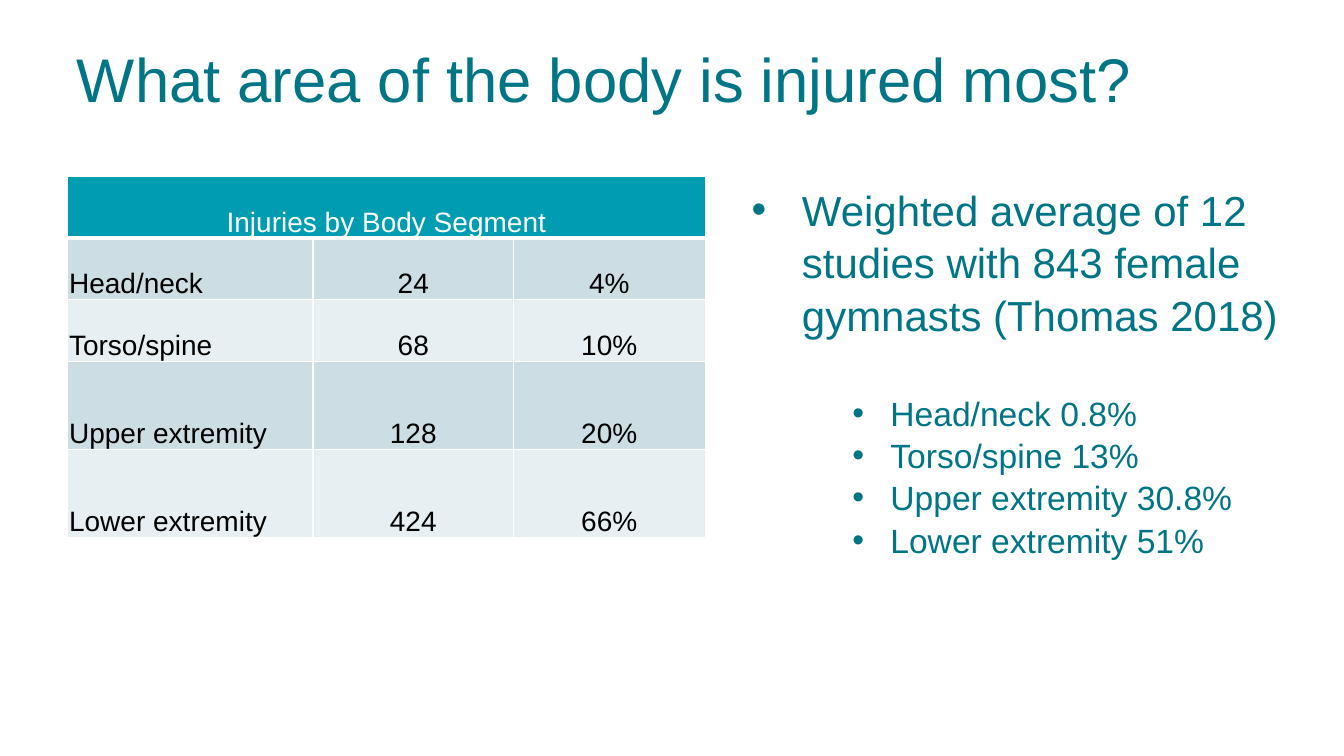
from dataclasses import dataclass
from typing import Any

from lxml.etree import Element, SubElement
from pptx import Presentation
from pptx.dml.color import RGBColor
from pptx.enum.text import MSO_ANCHOR, MSO_AUTO_SIZE, PP_ALIGN
from pptx.oxml.ns import qn
from pptx.util import Cm, Pt

TEAL = "007585"
HEAD = "009CB1"
BANDS = ["CCDEE4", "E7EFF2"]
WHITE = "FFFFFF"
BLACK = "000000"


@dataclass
class Row:
    area: str
    count: str
    share: str
    height: float


@dataclass
class Point:
    text: str
    size: float
    level: int
    left: float
    hang: float
    before: float = 0


ROWS = [
    Row("Head/neck", "24", "4%", 1.55),
    Row("Torso/spine", "68", "10%", 1.55),
    Row("Upper extremity", "128", "20%", 2.22),
    Row("Lower extremity", "424", "66%", 2.22),
]
WIDTHS = [6.18, 5.05, 4.83]
STUDY = Point(
    "Weighted average of 12 studies with 843 female gymnasts (Thomas 2018)",
    30, 0, 1.27, 1.27,
)
SHARES = ["Head/neck 0.8%", "Torso/spine 13%", "Upper extremity 30.8%", "Lower extremity 51%"]
POINTS = [STUDY] + [
    Point(text, 24, 2, 3.5, 0.96, 0 if i else 36) for i, text in enumerate(SHARES)
]


def paint(code: str) -> RGBColor:
    return RGBColor.from_string(code)


def write(para: Any, text: str, *, size: float, color: str,
          align: PP_ALIGN = PP_ALIGN.LEFT, lead: float = 1, before: float = 0) -> None:
    para.alignment = align
    para.line_spacing = lead
    if before:
        para.space_before = Pt(before)
    run = para.add_run()
    run.text = text
    run.font.name = "Arial"
    run.font.size = Pt(size)
    run.font.color.rgb = paint(color)


def mark(para: Any, left: float, hang: float) -> None:
    props = para._p.get_or_add_pPr()
    props.set("marL", str(Cm(left)))
    props.set("indent", str(-Cm(hang)))
    SubElement(props, qn("a:buFont"), typeface="Arial")
    SubElement(props, qn("a:buChar"), char="•")


def edge(cell: Any, base: float) -> None:
    props = cell._tc.get_or_add_tcPr()
    for i, side in enumerate("LRTB"):
        width = base if side == "B" else 1
        line = Element(qn(f"a:ln{side}"), w=str(Pt(width)))
        fill = SubElement(line, qn("a:solidFill"))
        SubElement(fill, qn("a:srgbClr"), val=WHITE)
        props.insert(i, line)


def dress(cell: Any, text: str, fill: str, color: str, align: PP_ALIGN, base: float = 1) -> None:
    cell.margin_left = cell.margin_right = cell.margin_top = Cm(0.03)
    cell.margin_bottom = Cm(0)
    cell.vertical_anchor = MSO_ANCHOR.BOTTOM
    cell.fill.solid()
    cell.fill.fore_color.rgb = paint(fill)
    edge(cell, base)
    if text:
        write(cell.text_frame.paragraphs[0], text, size=20, color=color, align=align)


def add_box(slide: Any, left: float, top: float, width: float, height: float) -> Any:
    frame = slide.shapes.add_textbox(Cm(left), Cm(top), Cm(width), Cm(height)).text_frame
    frame.word_wrap = True
    return frame


def add_title(slide: Any) -> None:
    frame = add_box(slide, 1.69, 0.76, 30.48, 3.18)
    frame.margin_top = Cm(0.19)
    write(frame.paragraphs[0], "What area of the body is injured most?",
          size=44, color=TEAL, lead=1.05)


def add_grid(slide: Any) -> None:
    heights = [1.55] + [row.height for row in ROWS]
    grid = slide.shapes.add_table(
        len(heights), len(WIDTHS), Cm(1.71), Cm(4.45), Cm(sum(WIDTHS)), Cm(sum(heights))
    ).table
    grid.horz_banding = False
    for line, height in zip(grid.rows, heights):
        line.height = Cm(height)
    for col, width in zip(grid.columns, WIDTHS):
        col.width = Cm(width)
    grid.cell(0, 0).merge(grid.cell(0, 2))
    for c, text in enumerate(["Injuries by Body Segment", "", ""]):
        dress(grid.cell(0, c), text, HEAD, WHITE, PP_ALIGN.CENTER, 3)
    for r, row in enumerate(ROWS):
        for c, text in enumerate([row.area, row.count, row.share]):
            align = PP_ALIGN.CENTER if c else PP_ALIGN.LEFT
            dress(grid.cell(r + 1, c), text, BANDS[r % 2], BLACK, align)


def add_points(slide: Any) -> None:
    frame = add_box(slide, 18.69, 4.45, 13.82, 9.5)
    frame.auto_size = MSO_AUTO_SIZE.SHAPE_TO_FIT_TEXT
    for i, point in enumerate(POINTS):
        para = frame.add_paragraph() if i else frame.paragraphs[0]
        para.level = point.level
        mark(para, point.left, point.hang)
        write(para, point.text, size=point.size, color=TEAL, lead=1.05, before=point.before)


def main() -> None:
    deck = Presentation()
    deck.slide_width = Cm(33.87)
    deck.slide_height = Cm(19.05)
    slide = deck.slides.add_slide(deck.slide_layouts[6])
    add_title(slide)
    add_grid(slide)
    add_points(slide)
    deck.save("out.pptx")


if __name__ == "__main__":
    main()
